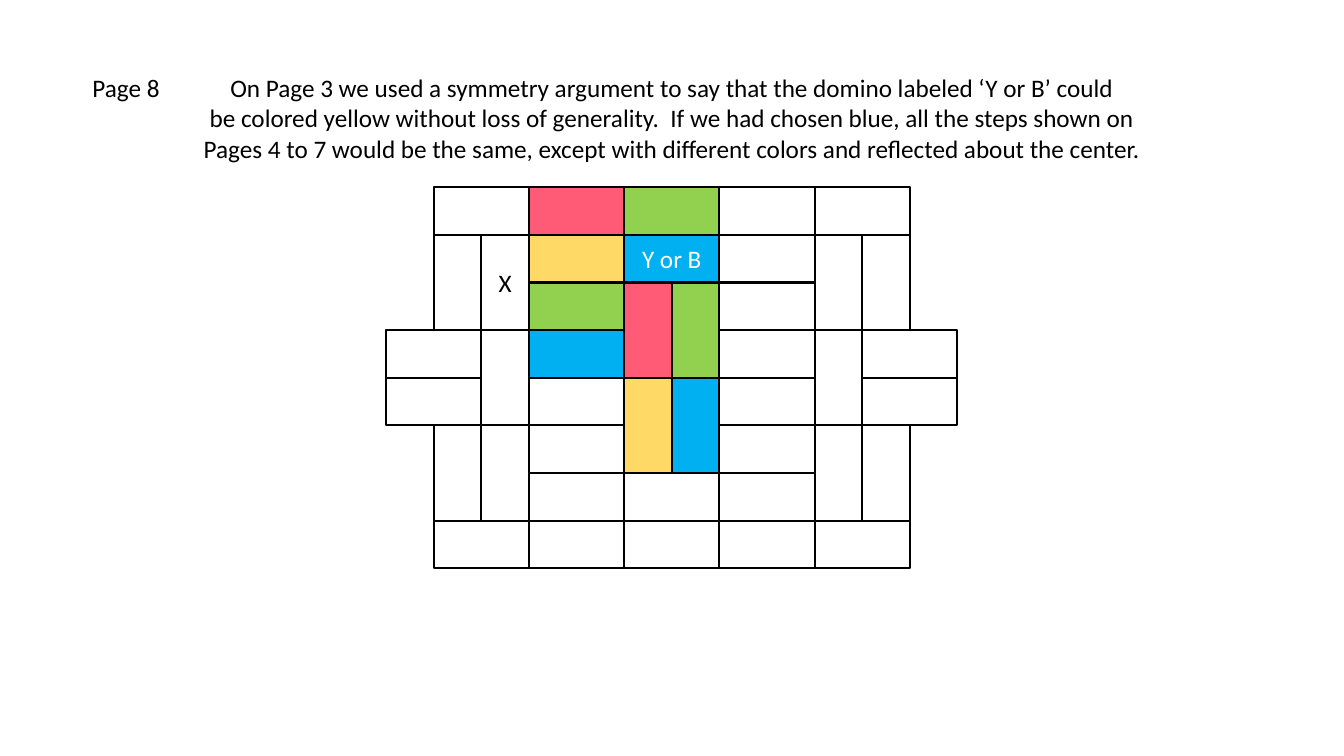
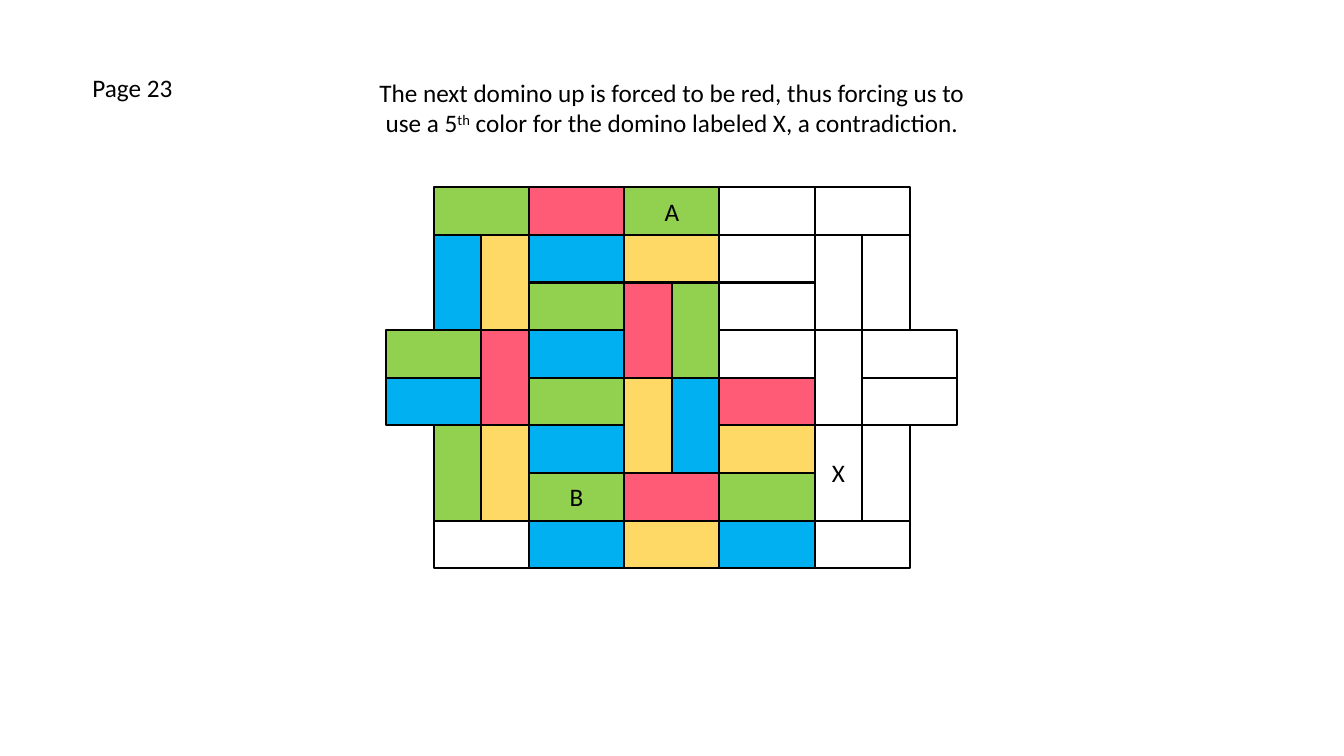
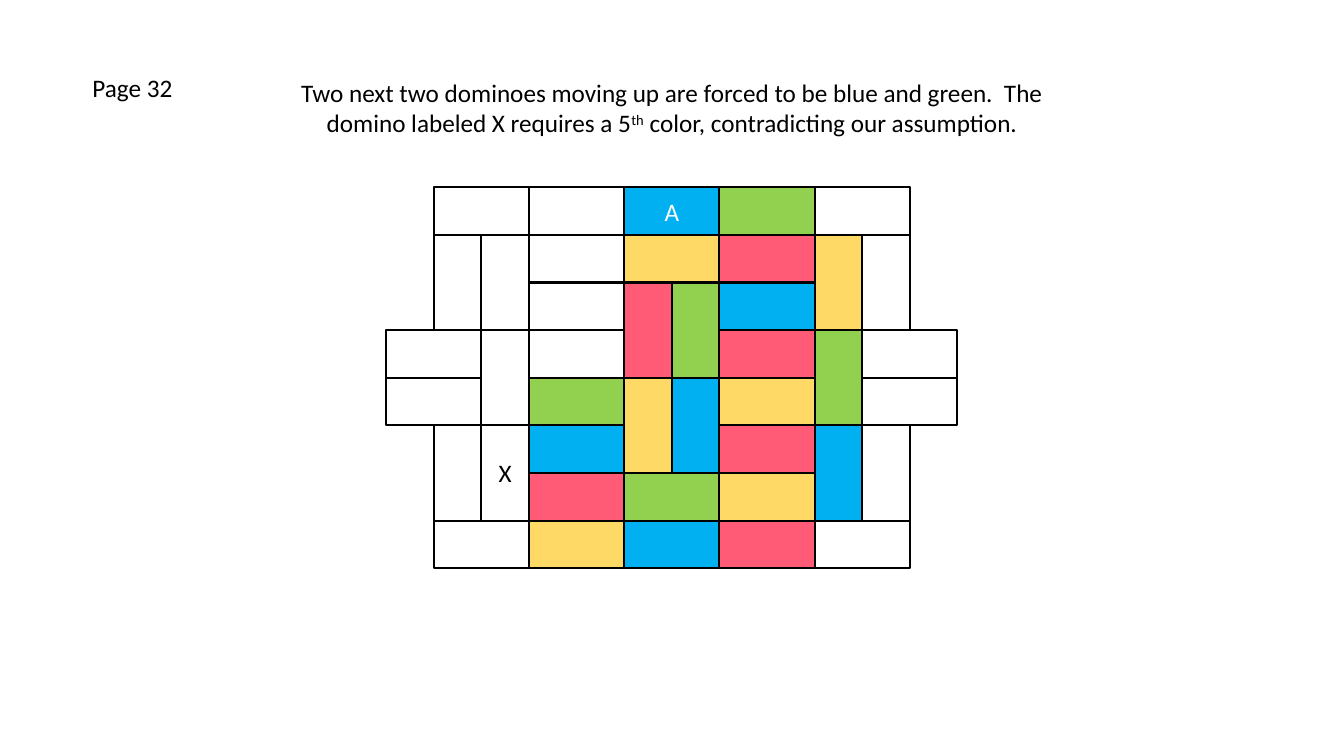
from dataclasses import dataclass, field

from pptx import Presentation
from pptx.dml.color import RGBColor
from pptx.enum.shapes import MSO_SHAPE
from pptx.enum.text import MSO_ANCHOR, MSO_AUTO_SIZE, PP_ALIGN
from pptx.slide import Slide
from pptx.text.text import TextFrame, _Paragraph
from pptx.util import Cm, Pt

RECTANGLE = MSO_SHAPE.RECTANGLE
MIDDLE = MSO_ANCHOR.MIDDLE
FIT_TEXT = MSO_AUTO_SIZE.SHAPE_TO_FIT_TEXT
LEFT, CENTER = PP_ALIGN.LEFT, PP_ALIGN.CENTER


@dataclass(frozen=True)
class Theme:
    font: str = "Calibri"
    size: Pt = Pt(18)
    outline: Pt = Pt(1.5)
    black: RGBColor = RGBColor(0x00, 0x00, 0x00)
    white: RGBColor = RGBColor(0xFF, 0xFF, 0xFF)
    fills: dict[str, RGBColor] = field(default_factory=lambda: {
        "R": RGBColor(0xFF, 0x5B, 0x77),
        "G": RGBColor(0x92, 0xD0, 0x50),
        "Y": RGBColor(0xFF, 0xD9, 0x66),
        "B": RGBColor(0x00, 0xB0, 0xF0),
    })


THEME = Theme()
SLIDE_WIDTH, SLIDE_HEIGHT = 33.87, 19.05
BOARD_LEFT, BOARD_TOP, CELL = 9.73, 4.72, 1.2
LINE_BOX_HEIGHT = 1.02
X_WIDTH = 0.83
SPANS = {"H": (2, 1), "V": (1, 2)}

TILING = (
    ".H.H.H.H.H..",
    ".VVH.H.H.VV.",
    "...H.VVH....",
    "H.VH...H.VH.",
    "H..H.VVH..H.",
    ".VVH...H.VV.",
    "...H.H.H....",
    ".H.H.H.H.H..",
)


@dataclass(frozen=True)
class Domino:
    row: int
    col: int
    columns: int
    rows: int

    @property
    def box(self) -> tuple[float, float, float, float]:
        return (BOARD_LEFT + self.col * CELL, BOARD_TOP + self.row * CELL,
                self.columns * CELL, self.rows * CELL)


@dataclass(frozen=True)
class Caption:
    lines: tuple[str, ...]
    top: float
    width: float
    height: float
    wrap: bool = False


@dataclass(frozen=True)
class Page:
    heading: str
    heading_width: float
    caption: Caption
    coloring: tuple[str, ...]
    labels: dict[tuple[int, int], str]
    contradiction: tuple[int, int]


DOMINOES = {
    (row, col): Domino(row, col, *SPANS[kind])
    for row, kinds in enumerate(TILING)
    for col, kind in enumerate(kinds)
    if kind in SPANS
}

PAGES = (
    Page(
        "Page 8", 2.24,
        Caption((
            "On Page 3 we used a symmetry argument to say that the domino labeled ‘Y or B’ could",
            "be colored yellow without loss of generality.  If we had chosen blue, all the steps shown on",
            "Pages 4 to 7 would be the same, except with different colors and reflected about the center.",
        ), 1.7, 24.26, 2.57),
        (
            "...R.G......",
            "...Y.B......",
            "...G.RG.....",
            "...B........",
            ".....YB.....",
            "............",
            "............",
            "............",
        ),
        {(1, 5): "Y or B"},
        (1, 2),
    ),
    Page(
        "Page 23", 2.54,
        Caption((
            "The next domino up is forced to be red, thus forcing us to",
            "use a 5^th^ color for the domino labeled X, a contradiction.",
        ), 1.83, 15.44, 1.8),
        (
            ".G.R.G......",
            ".BYB.Y......",
            "...G.RG.....",
            "G.RB........",
            "B..G.YBR....",
            ".GYB...Y....",
            "...G.R.G....",
            "...B.Y.B....",
        ),
        {(0, 5): "A", (6, 3): "B"},
        (5, 9),
    ),
    Page(
        "Page 32", 2.54,
        Caption((
            "Two next two dominoes moving up are forced to be blue and green.  "
            "The domino labeled X requires a 5^th^ color, contradicting our assumption.",
        ), 1.83, 19.25, 1.8, True),
        (
            ".....B.G....",
            ".....Y.R.Y..",
            ".....RGB....",
            ".......R.G..",
            "...G.YBY....",
            "...B...R.B..",
            "...R.G.Y....",
            "...Y.B.R....",
        ),
        {(0, 5): "A"},
        (5, 2),
    ),
)


def write_line(paragraph: _Paragraph, line: str, color: RGBColor, align: PP_ALIGN) -> None:
    paragraph.alignment = align
    for index, part in enumerate(line.split("^")):
        run = paragraph.add_run()
        run.text = part
        run.font.name = THEME.font
        run.font.size = THEME.size
        run.font.color.rgb = color
        if index % 2:
            run.font._element.set("baseline", "30000")


def write_lines(frame: TextFrame, lines: tuple[str, ...], color: RGBColor, align: PP_ALIGN) -> None:
    for index, line in enumerate(lines):
        paragraph = frame.add_paragraph() if index else frame.paragraphs[0]
        write_line(paragraph, line, color, align)


def add_text(slide: Slide, box: tuple[float, float, float, float], lines: tuple[str, ...],
             align: PP_ALIGN = LEFT, wrap: bool = False) -> None:
    frame = slide.shapes.add_textbox(*map(Cm, box)).text_frame
    frame.word_wrap = wrap
    frame.auto_size = FIT_TEXT
    write_lines(frame, lines, THEME.black, align)


def add_domino(slide: Slide, domino: Domino, color: str, label: str) -> None:
    tile = slide.shapes.add_shape(RECTANGLE, *map(Cm, domino.box))
    tile.shadow.inherit = False
    tile.line.color.rgb = THEME.black
    tile.line.width = THEME.outline
    if color in THEME.fills:
        tile.fill.solid()
        tile.fill.fore_color.rgb = THEME.fills[color]
    else:
        tile.fill.background()
    if label:
        tile.text_frame.vertical_anchor = MIDDLE
        ink = THEME.white if color == "B" else THEME.black
        write_lines(tile.text_frame, (label,), ink, CENTER)


def add_contradiction(slide: Slide, domino: Domino) -> None:
    left, top, width, height = domino.box
    add_text(slide, (left + (width - X_WIDTH) / 2, top + (height - LINE_BOX_HEIGHT) / 2,
                     X_WIDTH, LINE_BOX_HEIGHT), ("X",))


def add_page(slide: Slide, page: Page) -> None:
    for (row, col), domino in DOMINOES.items():
        add_domino(slide, domino, page.coloring[row][col], page.labels.get((row, col), ""))
    add_text(slide, (2.08, 1.7, page.heading_width, LINE_BOX_HEIGHT), (page.heading,))
    caption = page.caption
    caption_left = (SLIDE_WIDTH - caption.width) / 2
    add_text(slide, (caption_left, caption.top, caption.width, caption.height),
             caption.lines, CENTER, caption.wrap)
    add_contradiction(slide, DOMINOES[page.contradiction])


def main() -> None:
    deck = Presentation()
    deck.slide_width, deck.slide_height = Cm(SLIDE_WIDTH), Cm(SLIDE_HEIGHT)
    blank = deck.slide_layouts[6]
    for page in PAGES:
        add_page(deck.slides.add_slide(blank), page)
    deck.save("out.pptx")


if __name__ == "__main__":
    main()
